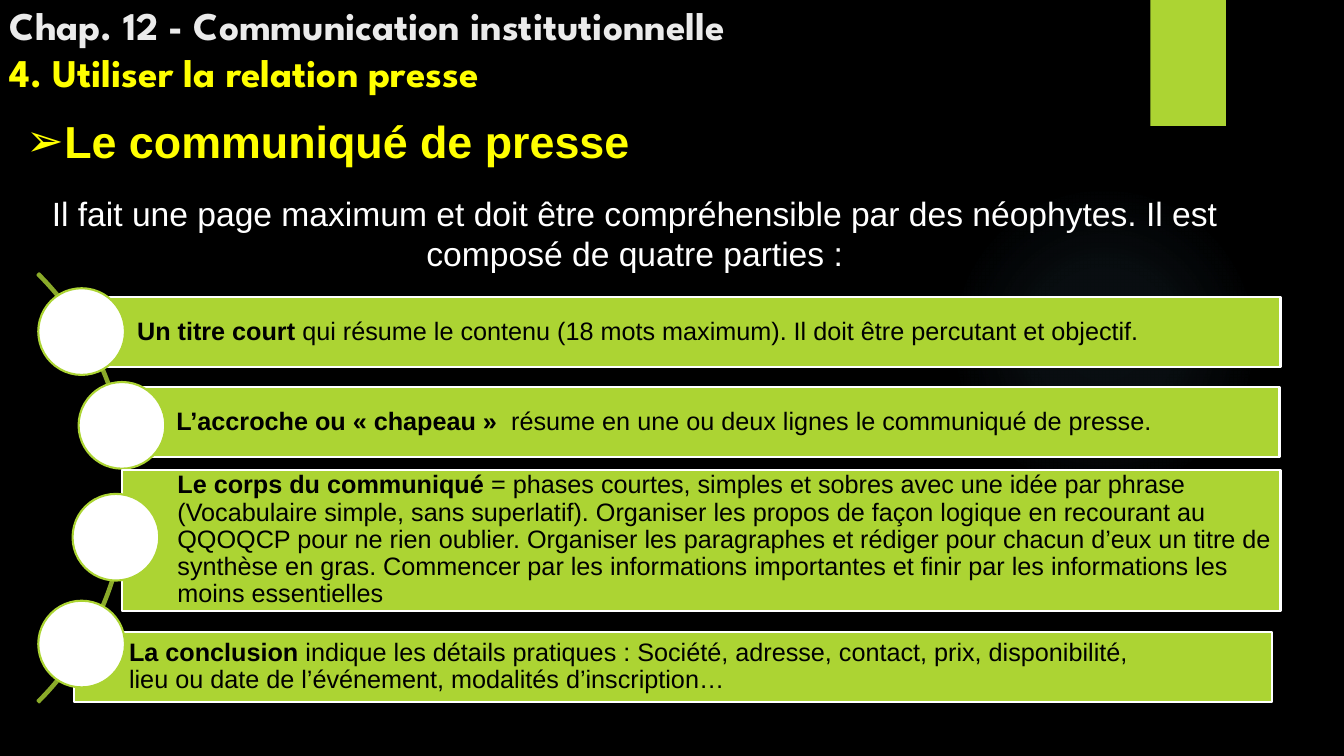
from lxml import etree
from pptx import Presentation
from pptx.dml.color import RGBColor
from pptx.enum.shapes import MSO_SHAPE as Preset
from pptx.enum.text import MSO_ANCHOR as Anchor, PP_ALIGN as Align
from pptx.oxml import parse_xml
from pptx.oxml.ns import nsdecls, qn
from pptx.util import Pt

PX = 9144  # 100 px to the inch
GREEN, DARK_GREEN = "ACD433", "8AAA29"
WHITE, BLACK, YELLOW, PALE = "FFFFFF", "000000", "FFFF00", "EBEBEB"
DISC = 86

# bar box, disc corner, bold lead, rest of the text line by line
PARTS = [
    ((81, 295, 1189, 69), (38, 286), "Un titre court",
     [" qui résume le contenu (18 mots maximum). Il doit être percutant et objectif."]),
    ((120, 384, 1149, 69), (78, 379), "L’accroche ou « chapeau »",
     ["  résume en une ou deux lignes le communiqué de presse."]),
    ((121, 466, 1149, 140), (72, 490), "Le corps du communiqué",
     [" = phases courtes, simples et sobres avec une idée par phrase "
      "(Vocabulaire simple, sans superlatif). Organiser les propos de façon logique "
      "en recourant au QQOQCP pour ne rien oublier. Organiser les paragraphes et "
      "rédiger pour chacun d’eux un titre de synthèse en gras. Commencer par les "
      "informations importantes et finir par les informations les moins essentielles"]),
    ((73, 627, 1189, 69), (38, 596), "La conclusion",
     [" indique les détails pratiques : Société, adresse, contact, prix, disponibilité,",
      "lieu ou date de l’événement, modalités d’inscription…"]),
]


def color(value):
    return RGBColor.from_string(value)


def emu(box):
    return [length * PX for length in box]


def add_preset(slide, preset, box, fill=None, line=None):
    shape = slide.shapes.add_shape(preset, *emu(box))
    shape.shadow.inherit = False
    if fill:
        shape.fill.solid()
        shape.fill.fore_color.rgb = color(fill)
    else:
        shape.fill.background()
    if line:
        shape.line.color.rgb = color(line)
        shape.line.width = Pt(1.5)
    else:
        shape.line.fill.background()
    return shape


def set_margins(frame, left, top, right, bottom):
    frame.margin_left, frame.margin_top = left * PX, top * PX
    frame.margin_right, frame.margin_bottom = right * PX, bottom * PX


def set_font(font, name, size, value, bold=False):
    font.name, font.size, font.bold = name, Pt(size), bold
    font.color.rgb = color(value)


def add_text_frame(slide, box):
    frame = slide.shapes.add_textbox(*emu(box)).text_frame
    frame.word_wrap = True
    return frame


def add_glow(slide, box):
    """Faint blue disc that fades out towards its rim."""
    glow = add_preset(slide, Preset.OVAL, box)
    stops = "".join(
        f'<a:gs pos="{position}000"><a:srgbClr val="7AC4F0">'
        f'<a:alpha val="{alpha}000"/></a:srgbClr></a:gs>'
        for position, alpha in [(0, 7), (36, 6), (69, 0)])
    gradient = parse_xml(
        f'<a:gradFill {nsdecls("a")}><a:gsLst>{stops}</a:gsLst><a:path path="circle">'
        '<a:fillToRect l="50000" t="50000" r="50000" b="50000"/></a:path></a:gradFill>')
    properties = glow.element.spPr
    properties.replace(properties.find(qn("a:noFill")), gradient)


def add_title(slide, box):
    frame = add_text_frame(slide, box)
    frame.vertical_anchor = Anchor.BOTTOM
    paragraph = frame.paragraphs[0]
    chapter = paragraph.add_run()
    chapter.text = "Chap. 12 - Communication institutionnelle"
    paragraph.add_line_break()
    section = paragraph.add_run()
    section.text = "4. Utiliser la relation presse"
    for run, value in [(chapter, PALE), (section, YELLOW)]:
        set_font(run.font, "League Spartan", 28, value, bold=True)


def add_introduction(slide, box):
    frame = add_text_frame(slide, box)
    set_margins(frame, 10, 10, 10, 5)
    heading = frame.paragraphs[0]
    heading.text = "Le communiqué de presse"
    heading.alignment = Align.JUSTIFY
    properties = heading._p.get_or_add_pPr()
    properties.set("marL", str(38 * PX))
    properties.set("indent", str(-38 * PX))
    etree.SubElement(properties, qn("a:buFont")).set("typeface", "Arial")
    etree.SubElement(properties, qn("a:buChar")).set("char", "➢")
    set_font(heading.font, "Arial", 32, YELLOW, bold=True)

    summary = frame.add_paragraph()
    summary.text = ("Il fait une page maximum et doit être compréhensible par des "
                    "néophytes. Il est composé de quatre parties :")
    summary.alignment = Align.CENTER
    summary.space_before = Pt(18)
    set_font(summary.font, "Arial", 24, WHITE)


def add_arc(slide, box):
    """Thin arc, from 315 to 45 degrees, that links the discs."""
    arc = add_preset(slide, Preset.BLOCK_ARC, box, line=DARK_GREEN)
    for index, value in enumerate([189, 27, 0.004]):
        arc.adjustments[index] = value


def add_part(slide, box, disc_corner, lead, lines):
    bar = add_preset(slide, Preset.RECTANGLE, box, GREEN, WHITE)
    frame = bar.text_frame
    frame.word_wrap = True
    frame.vertical_anchor = Anchor.MIDDLE
    set_margins(frame, 55, 5, 5, 5)
    for index, line in enumerate(lines):
        paragraph = frame.add_paragraph() if index else frame.paragraphs[0]
        paragraph.alignment = Align.LEFT
        paragraph.line_spacing = 0.9
        set_font(paragraph.font, "Arial", 18, BLACK)
        if index == 0:
            run = paragraph.add_run()
            run.text = lead
            run.font.bold = True
        paragraph.add_run().text = line
    add_preset(slide, Preset.OVAL, (*disc_corner, DISC, DISC), WHITE, GREEN)


def main():
    presentation = Presentation()
    presentation.slide_width, presentation.slide_height = emu((1333, 750))
    slide = presentation.slides.add_slide(presentation.slide_layouts[6])
    slide.background.fill.solid()
    slide.background.fill.fore_color.rgb = color(BLACK)

    add_glow(slide, (941, 183, 308, 308))
    add_preset(slide, Preset.RECTANGLE, (1141, 0, 75, 125), GREEN)
    add_title(slide, (0, -3, 1295, 103))
    add_introduction(slide, (16, 103, 1227, 170))
    add_arc(slide, (-475, 183, 602, 602))
    for part in PARTS:
        add_part(slide, *part)
    presentation.save("out.pptx")


if __name__ == "__main__":
    main()
